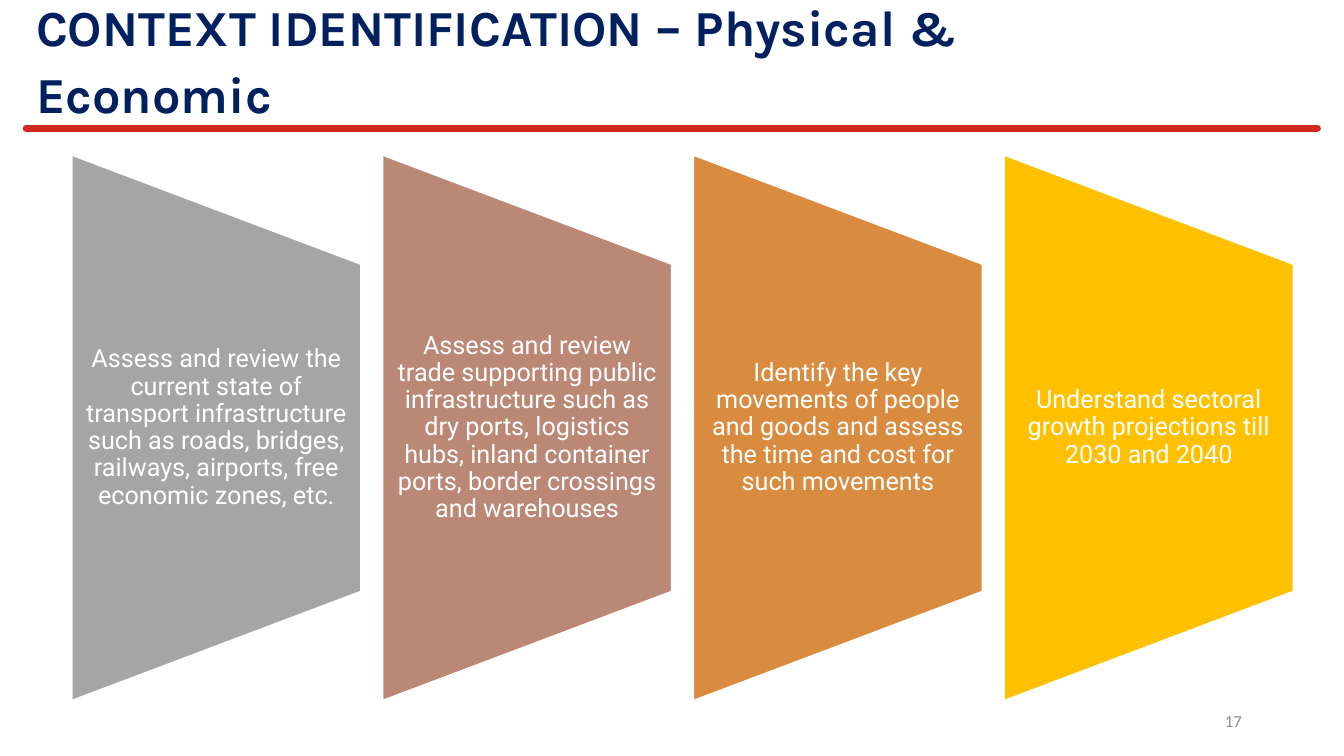
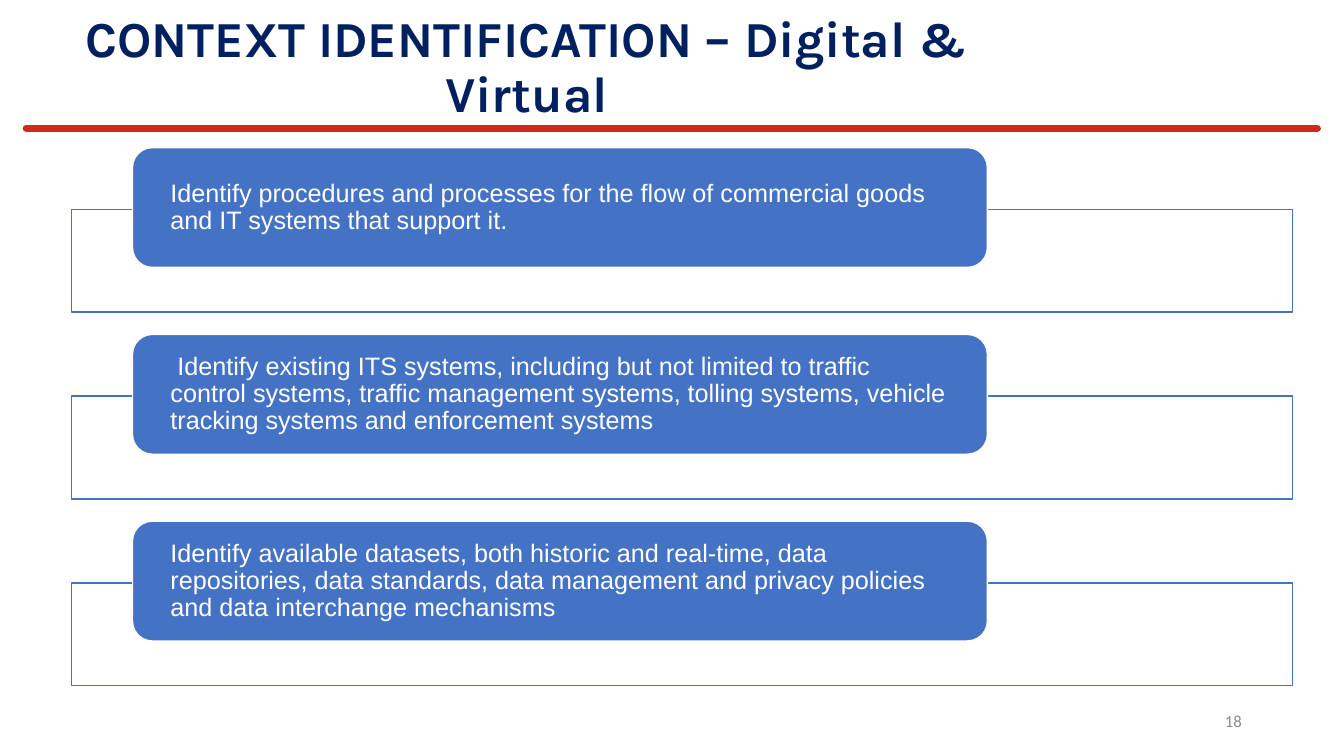
"""Build two context identification slides."""
import dataclasses
import typing

import pptx
import pptx.dml.color
import pptx.enum.shapes
import pptx.enum.text
import pptx.oxml
import pptx.util
import lxml.etree

Cm = pptx.util.Cm
Pt = pptx.util.Pt
SHAPE = pptx.enum.shapes.MSO_SHAPE
ALIGN = pptx.enum.text.PP_ALIGN
ANCHOR = pptx.enum.text.MSO_ANCHOR
DRAWING = "{http://schemas.openxmlformats.org/drawingml/2006/main}"


@dataclasses.dataclass(frozen=True)
class Theme:
    """Colours, fonts and type sizes of the presentation."""
    white: str = "FFFFFF"
    navy: str = "002060"
    red: str = "D12A1D"
    blue: str = "4472C4"
    grey: str = "8C8C8C"
    panels: tuple = ("A5A5A5", "BB8876", "D98B3F", "FFC000")
    title_font: str = "Karla"
    panel_font: str = "Roboto"
    card_font: str = "Arial"
    number_font: str = "Calibri"
    title_size: int = 36
    body_size: int = 18
    number_size: int = 12


class Box(typing.NamedTuple):
    """A rectangle in centimetres."""
    left: float
    top: float
    width: float
    height: float

    def emu(self):
        """Return the four lengths for python-pptx."""
        return [Cm(length) for length in self]


THEME = Theme()
TITLE_LEFT = Box(0.66, 1.2, 29.8, 2.03)
TITLE_CENTRED = Box(0, 0.69, 26.54, 2.54)
PAGE_NUMBER = Box(23.93, 17.65, 7.62, 1.02)
PANEL_AREA = Box(1.81, 3.91, 30.78, 13.74)
CARD_AREA = Box(1.8, 3.72, 30.78, 13.56)

PHYSICAL_STEPS = (
    "Assess and review the current state of transport infrastructure such as "
    "roads, bridges, railways, airports, free economic zones, etc.",
    "Assess and review trade supporting public infrastructure such as dry ports, "
    "logistics hubs, inland container ports, border crossings and warehouses",
    "Identify the key movements of people and goods and assess the time and cost "
    "for such movements",
    "Understand sectoral growth projections till 2030 and 2040",
)
DIGITAL_STEPS = (
    "Identify procedures and processes for the flow of commercial goods and IT "
    "systems that support it.",
    " Identify existing ITS systems, including but not limited to traffic control "
    "systems, traffic management systems, tolling systems, vehicle tracking "
    "systems and enforcement systems",
    "Identify available datasets, both historic and real-time, data repositories, "
    "data standards, data management and privacy policies and data interchange "
    "mechanisms",
)


def rgb(colour):
    """Turn a hex string into a colour."""
    return pptx.dml.color.RGBColor.from_string(colour)


def write(holder, text, font, size, colour, align=ALIGN.LEFT, spacing=1.0,
          anchor=ANCHOR.MIDDLE, side=0.25, bold=False):
    """Fill a shape or text box with one formatted paragraph."""
    frame = holder.text_frame
    frame.text = text
    frame.word_wrap = True
    frame.vertical_anchor = anchor
    frame.margin_left = frame.margin_right = Cm(side)
    paragraph = frame.paragraphs[0]
    paragraph.alignment = align
    paragraph.line_spacing = spacing
    for run in paragraph.runs:
        run.font.name = font
        run.font.size = Pt(size)
        run.font.bold = bold
        run.font.color.rgb = rgb(colour)


def add_block(slide, kind, box, fill, outline):
    """Add a flat filled shape with a thin outline."""
    block = slide.shapes.add_shape(kind, *box.emu())
    block.shadow.inherit = False
    block.fill.solid()
    block.fill.fore_color.rgb = rgb(fill)
    block.line.color.rgb = rgb(outline)
    block.line.width = Pt(1)
    return block


def add_title(slide, box, text, align, spacing):
    """Add the slide title, seated on the bottom of its box."""
    write(slide.shapes.add_textbox(*box.emu()), text, THEME.title_font,
          THEME.title_size, THEME.navy, align, spacing, ANCHOR.BOTTOM, bold=True)


def add_rule(slide, box):
    """Draw the round-ended red rule along the foot of the title box."""
    level = Cm(box.top + box.height)
    rule = slide.shapes.add_connector(pptx.enum.shapes.MSO_CONNECTOR.STRAIGHT,
                                      Cm(0.66), level, Cm(33.2), level)
    rule.line.color.rgb = rgb(THEME.red)
    rule.line.width = Pt(5)
    rule.line._get_or_add_ln().set("cap", "rnd")
    lxml.etree.SubElement(rule._element.spPr, DRAWING + "effectLst")


def add_page_number(slide, box, number):
    """Add the page number at the lower right."""
    write(slide.shapes.add_textbox(*box.emu()), str(number), THEME.number_font,
          THEME.number_size, THEME.grey, ALIGN.RIGHT)


def add_panels(slide, area, steps, gap=0.55):
    """Set the steps side by side in panels that taper to the right."""
    width = (area.width - gap * (len(steps) - 1)) / len(steps)
    for index, (step, colour) in enumerate(zip(steps, THEME.panels)):
        panel = Box(area.left + index * (width + gap), area.top, width, area.height)
        shift = (panel.height - panel.width) / 2
        upright = Box(panel.left - shift, panel.top + shift,
                      panel.height, panel.width)
        taper = add_block(slide, SHAPE.FLOWCHART_MANUAL_OPERATION, upright,
                          colour, THEME.white)
        taper.rotation = 270
        inner = Box(panel.left, panel.top + panel.height / 5,
                    panel.width, panel.height * 3 / 5)
        write(slide.shapes.add_textbox(*inner.emu()), step, THEME.panel_font,
              THEME.body_size, THEME.white, ALIGN.CENTER, 0.9, side=0.3)


def add_cards(slide, area, steps, gap=0.56):
    """Stack the steps as rounded cards, each over an outlined frame."""
    height = (area.height - gap * (len(steps) - 1)) / len(steps)
    frame_height, card_height = 2.59, 3.02
    for index, step in enumerate(steps):
        top = area.top + index * (height + gap)
        add_block(slide, SHAPE.RECTANGLE,
                  Box(area.left, top + height - frame_height,
                      area.width, frame_height), THEME.white, THEME.blue)
        card = add_block(slide, SHAPE.ROUNDED_RECTANGLE,
                         Box(area.left + area.width * 0.05, top,
                             area.width * 0.7, card_height),
                         THEME.blue, THEME.white)
        write(card, step, THEME.card_font, THEME.body_size, THEME.white,
              spacing=0.9, side=0.81)


def add_context_slide(deck, number, title, box, align, spacing):
    """Add a blank slide with the shared title, page number and rule."""
    slide = deck.slides.add_slide(deck.slide_layouts[6])
    add_title(slide, box, title, align, spacing)
    add_page_number(slide, PAGE_NUMBER, number)
    add_rule(slide, box)
    return slide


def main():
    """Build and save the presentation."""
    deck = pptx.Presentation()
    deck.slide_width, deck.slide_height = Cm(33.87), Cm(19.05)
    physical = add_context_slide(
        deck, 17, "CONTEXT IDENTIFICATION – Physical & Economic",
        TITLE_LEFT, ALIGN.LEFT, 1.1)
    add_panels(physical, PANEL_AREA, PHYSICAL_STEPS)
    digital = add_context_slide(
        deck, 18, "CONTEXT IDENTIFICATION – Digital & Virtual",
        TITLE_CENTRED, ALIGN.CENTER, 0.9)
    add_cards(digital, CARD_AREA, DIGITAL_STEPS)
    deck.save("out.pptx")


if __name__ == "__main__":
    main()
